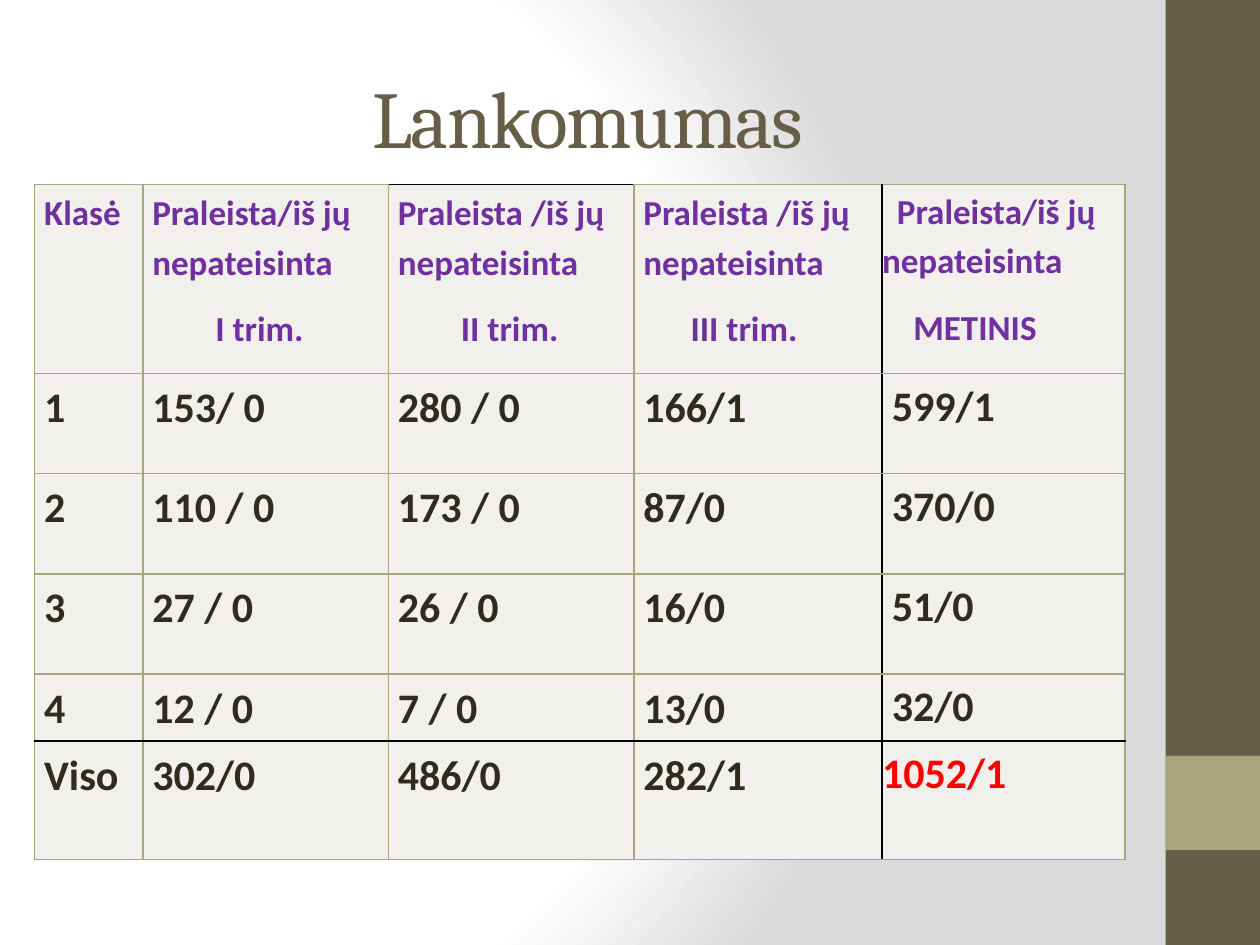
from dataclasses import dataclass

from pptx import Presentation
from pptx.dml.color import RGBColor
from pptx.enum.shapes import MSO_SHAPE
from pptx.enum.text import MSO_ANCHOR, PP_ALIGN
from pptx.oxml import parse_xml
from pptx.oxml.ns import nsdecls, qn
from pptx.util import Cm, Pt


@dataclass(frozen=True)
class Theme:
    brown: str = "675E47"
    olive: str = "A9A57C"
    purple: str = "7030A0"
    dark: str = "2F2B20"
    red: str = "FF0000"
    black: str = "000000"
    cell: str = "F1F0EC"
    white: str = "FFFFFF"
    gray: str = "DADADA"
    title_font: str = "Cambria"
    body_font: str = "Calibri"
    title_size: int = 46
    header_size: int = 20
    body_size: int = 24


THEME = Theme()

COL_WIDTHS = [2.18, 4.95, 4.95, 5, 4.9]
ROW_HEIGHTS = [3.81, 2.02, 2.02, 2.02, 1.35, 2.39]

HEADER = [
    [("Klasė", 0)],
    [("Praleista/iš jų nepateisinta", 0), ("I trim.", 1.27)],
    [("Praleista /iš jų nepateisinta", 0), ("II trim.", 1.27)],
    [("Praleista /iš jų nepateisinta", 0), ("III trim.", 0.95)],
    [("Praleista/iš jų nepateisinta", 0.3), ("METINIS", 0.63)],
]
VALUES = [
    ["1", "153/ 0", "280 / 0", "166/1", "599/1"],
    ["2", "110 / 0", "173 / 0", "87/0", "370/0"],
    ["3", "27 / 0", "26 / 0", "16/0", "51/0"],
    ["4", "12 / 0", "7 / 0", "13/0", "32/0"],
    ["Viso", "302/0", "486/0", "282/1", "1052/1"],
]
LAST_COL = len(COL_WIDTHS) - 1
LAST_ROW = len(VALUES)


def rgb(color):
    return RGBColor.from_string(color)


def set_background(s):
    s.background.fill.solid()
    stops = [(0, THEME.white), (75, THEME.white), (100, THEME.gray)]
    gs = "".join(
        f'<a:gs pos="{pos * 1000}"><a:srgbClr val="{color}"/></a:gs>'
        for pos, color in stops
    )
    grad = parse_xml(
        f'<a:gradFill {nsdecls("a")} rotWithShape="1"><a:gsLst>{gs}</a:gsLst>'
        '<a:path path="circle">'
        '<a:fillToRect l="20000" t="50000" r="100000" b="50000"/>'
        "</a:path></a:gradFill>"
    )
    bg = s._element.find(".//" + qn("p:bgPr"))
    bg.replace(bg[0], grad)


def add_sidebar(s, left, top, width, height):
    bands = [(top, height, THEME.brown), (top + 15.24, width, THEME.olive)]
    for y, h, color in bands:
        sp = s.shapes.add_shape(
            MSO_SHAPE.RECTANGLE, Cm(left), Cm(y), Cm(width), Cm(h)
        )
        sp.shadow.inherit = False
        sp.fill.solid()
        sp.fill.fore_color.rgb = rgb(color)
        sp.line.fill.background()


def add_title(s, left, top, width, height):
    sp = s.shapes.add_textbox(Cm(left), Cm(top), Cm(width), Cm(height))
    tf = sp.text_frame
    tf.word_wrap = True
    tf.vertical_anchor = MSO_ANCHOR.MIDDLE
    p = tf.paragraphs[0]
    p.alignment = PP_ALIGN.CENTER
    r = p.add_run()
    r.text = "Lankomumas"
    r.font.name = THEME.title_font
    r.font.size = Pt(THEME.title_size)
    r.font.color.rgb = rgb(THEME.brown)
    r.font._element.set("spc", "-100")


def set_borders(cell, row, col):
    black = {
        "L": col == LAST_COL,
        "R": col == LAST_COL - 1,
        "T": row == LAST_ROW or (row, col) == (0, 2),
        "B": row == LAST_ROW - 1,
    }
    for side, is_black in black.items():
        color = THEME.black if is_black else THEME.olive
        cell._tc.get_or_add_tcPr().append(parse_xml(
            f'<a:ln{side} {nsdecls("a")} w="{Pt(1)}"><a:solidFill>'
            f'<a:srgbClr val="{color}"/></a:solidFill></a:ln{side}>'
        ))


def fill_cell(cell, lines, size, color, inset):
    cell.margin_left = cell.margin_right = Cm(inset)
    cell.margin_top = Cm(0.03 if inset else 0)
    cell.margin_bottom = 0
    cell.fill.solid()
    cell.fill.fore_color.rgb = rgb(THEME.cell)
    tf = cell.text_frame
    for i, (text, indent) in enumerate(lines):
        p = tf.add_paragraph() if i else tf.paragraphs[0]
        p.text = text
        p.line_spacing = 1.15
        p.space_after = Pt(10)
        p.font.name = THEME.body_font
        p.font.size = Pt(size)
        p.font.bold = True
        p.font.color.rgb = rgb(color)
        if indent:
            pPr = p._p.get_or_add_pPr()
            pPr.set("marL", "0")
            pPr.set("indent", str(Cm(indent)))


def body_style(row, col):
    is_total = (row, col) == (LAST_ROW, LAST_COL)
    indent = 0.2 if col == LAST_COL and not is_total else 0
    return indent, THEME.red if is_total else THEME.dark


def add_attendance(s, left, top):
    table = s.shapes.add_table(
        len(ROW_HEIGHTS), len(COL_WIDTHS), Cm(left), Cm(top),
        Cm(sum(COL_WIDTHS)), Cm(sum(ROW_HEIGHTS)),
    ).table
    for column, width in zip(table.columns, COL_WIDTHS):
        column.width = Cm(width)
    for row, height in zip(table.rows, ROW_HEIGHTS):
        row.height = Cm(height)
    for row in range(len(ROW_HEIGHTS)):
        for col in range(len(COL_WIDTHS)):
            if row == 0:
                lines, size, color = HEADER[col], THEME.header_size, THEME.purple
            else:
                indent, color = body_style(row, col)
                lines, size = [(VALUES[row - 1][col], indent)], THEME.body_size
            cell = table.cell(row, col)
            set_borders(cell, row, col)
            fill_cell(cell, lines, size, color, 0 if col == LAST_COL else 0.19)


def main():
    prs = Presentation()
    prs.slide_width, prs.slide_height = Cm(25.4), Cm(19.05)
    s = prs.slides.add_slide(prs.slide_layouts[6])
    set_background(s)
    add_sidebar(s, 23.5, 0, 1.9, 19.05)
    add_title(s, 1.27, 0.76, 21.16, 3.18)
    add_attendance(s, 0.7, 3.72)
    prs.save("out.pptx")


if __name__ == "__main__":
    main()
